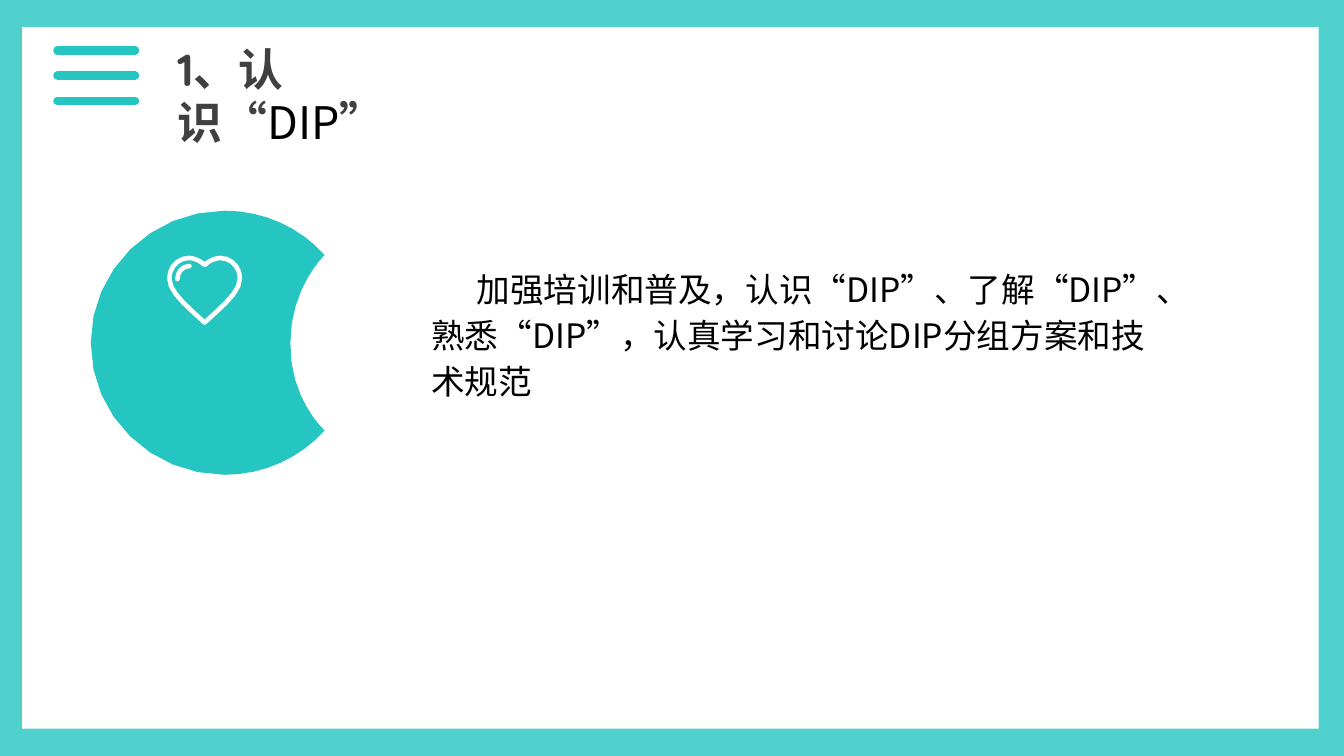
from lxml.etree import SubElement
from pptx import Presentation
from pptx.dml.color import RGBColor
from pptx.enum.shapes import MSO_CONNECTOR as Connector, MSO_SHAPE as Shape
from pptx.enum.text import MSO_ANCHOR as Anchor, MSO_AUTO_SIZE as AutoSize, PP_ALIGN as Align
from pptx.oxml.ns import qn
from pptx.util import Inches, Pt

TEAL, PALE_TEAL, WHITE = "25C5C1", "51D1CD", "FFFFFF"
GREY, BLACK = "404040", "000000"
SANS, ROUNDED = "Noto Sans CJK SC", "Quicksand"

MOON = [
    (0.9, 3.4),
    [(0.9, 2.68), (1.5, 2.09), (2.23, 2.09)],
    [(2.62, 2.09), (2.98, 2.26), (3.22, 2.53)],
    [(3.22, 2.53), (2.88, 2.85), (2.88, 3.4)],
    [(2.87, 3.96), (3.22, 4.27), (3.22, 4.27)],
    [(2.98, 4.54), (2.62, 4.71), (2.23, 4.71)],
    [(1.5, 4.71), (0.9, 4.13), (0.9, 3.4)],
]
HEART_CENTRE = 2.03
HEART_LEFT_HALF = [
    (2.03, 2.63),
    [(1.99, 2.59), (1.93, 2.56), (1.87, 2.56)],
    [(1.77, 2.56), (1.68, 2.65), (1.68, 2.76)],
    [(1.68, 2.89), (1.82, 3.01), (2.03, 3.2)],
]
HEART_GLINT = [(1.76, 2.77), [(1.76, 2.7), (1.81, 2.64), (1.88, 2.64)]]


def colour(code):
    return RGBColor.from_string(code)


def trace(outline, steps):
    """Points along a start point followed by cubic Bezier segments."""
    points = [outline[0]]
    for control_1, control_2, end in outline[1:]:
        start = points[-1]
        for step in range(1, steps + 1):
            t = step / steps
            u = 1 - t
            points.append(tuple(
                u**3 * a + 3 * u * u * t * b + 3 * u * t * t * c + t**3 * d
                for a, b, c, d in zip(start, control_1, control_2, end)))
    return points


def round_cap(line):
    line._get_or_add_ln().set("cap", "rnd")


def paint(shape, fill=None, line=None, width=0):
    shape.shadow.inherit = False
    if fill:
        shape.fill.solid()
        shape.fill.fore_color.rgb = colour(fill)
    else:
        shape.fill.background()
    if line:
        shape.line.color.rgb = colour(line)
        shape.line.width = Pt(width)
        round_cap(shape.line)
    else:
        shape.line.fill.background()


def add_outline(page, closed, open_stroke=(), **style):
    """Draw a closed contour and, in the same shape, an optional open stroke."""
    contour, stroke = (
        [(Inches(x), Inches(y)) for x, y in points] for points in (closed, open_stroke))
    builder = page.shapes.build_freeform(*contour[0], scale=1.0)
    builder.add_line_segments(contour[1:], close=True)
    if stroke:
        builder.move_to(*stroke[0])
        builder.add_line_segments(stroke[1:], close=False)
    paint(builder.convert_to_shape(), **style)


def add_panel(page, left, top, width, height, fill):
    panel = page.shapes.add_shape(
        Shape.RECTANGLE, Inches(left), Inches(top), Inches(width), Inches(height))
    paint(panel, fill)


def add_menu_icon(page):
    for row in range(3):
        y = Inches(0.5 + 0.25 * row)
        bar = page.shapes.add_connector(
            Connector.STRAIGHT, Inches(0.57), y, Inches(1.34), y)
        bar.line.color.rgb = colour(TEAL)
        bar.line.width = Pt(6)
        round_cap(bar.line)
        SubElement(bar._element.spPr, qn("a:effectLst"))


def add_heart(page):
    left = trace(HEART_LEFT_HALF, steps=5)
    right = [(2 * HEART_CENTRE - x, y) for x, y in reversed(left[1:-1])]
    add_outline(page, left + right, trace(HEART_GLINT, steps=4), line=WHITE, width=3.25)


def add_span(para, text, size, font, code, bold=False):
    span = para.add_run()
    span.text = text
    span.font.size = Pt(size)
    span.font.name = font
    span.font.bold = bold
    span.font.color.rgb = colour(code)
    SubElement(span._r.get_or_add_rPr(), qn("a:ea"), typeface=SANS)


def prepare_text(box, left, top, width, height):
    """Place a text shape and return its first paragraph."""
    box.left, box.top = Inches(left), Inches(top)
    box.width, box.height = Inches(width), Inches(height)
    frame = box.text_frame
    frame.word_wrap = True
    frame.auto_size = AutoSize.NONE
    frame.vertical_anchor = Anchor.TOP
    para = frame.paragraphs[0]
    para.alignment = Align.LEFT
    return para


def add_title(page):
    title = page.shapes.title
    page.shapes._spTree.append(title._element)
    para = prepare_text(title, 1.66, 0.36, 3.0, 1.15)
    add_span(para, "1、认识“", 32, ROUNDED, GREY, bold=True)
    add_span(para, "DIP", 32, SANS, BLACK)
    add_span(para, "”", 32, ROUNDED, GREY, bold=True)


def add_body(page):
    box = page.shapes.add_textbox(0, 0, 0, 0)
    para = prepare_text(box, 4.18, 2.56, 7.45, 1.54)
    para.line_spacing = 1.14
    para._p.get_or_add_pPr().set("indent", str(Inches(0.45)))
    add_span(para, "加强培训和普及，认识“DIP”、了解“DIP”、熟悉“DIP”，"
                   "认真学习和讨论DIP分组方案和技术规范", 24, SANS, BLACK)


def main():
    deck = Presentation()
    deck.slide_width, deck.slide_height = Inches(13.33), Inches(7.5)
    page = deck.slides.add_slide(deck.slide_layouts[5])
    add_panel(page, 0, 0, 13.33, 7.5, PALE_TEAL)
    add_panel(page, 0.22, 0.27, 12.86, 6.96, WHITE)
    add_outline(page, trace(MOON, steps=8), fill=TEAL)
    add_heart(page)
    add_body(page)
    add_menu_icon(page)
    add_title(page)
    deck.save("out.pptx")


if __name__ == "__main__":
    main()
